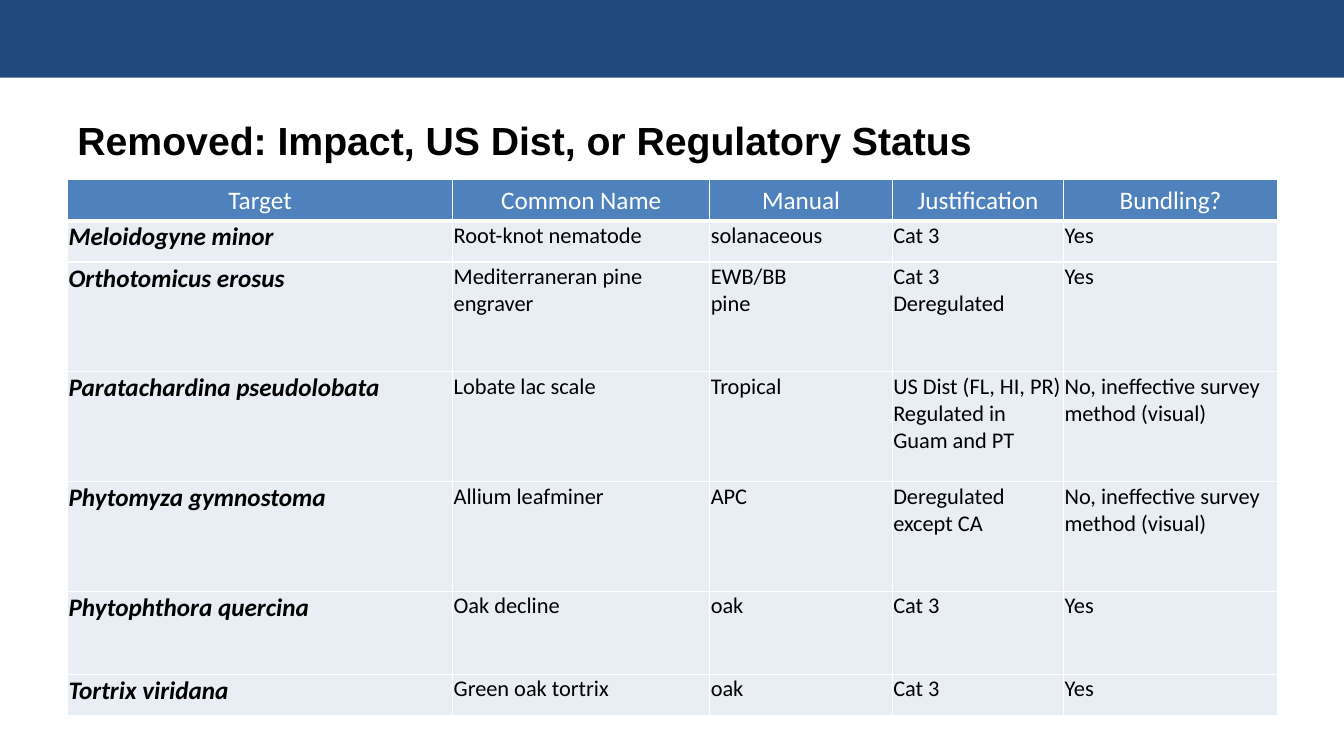
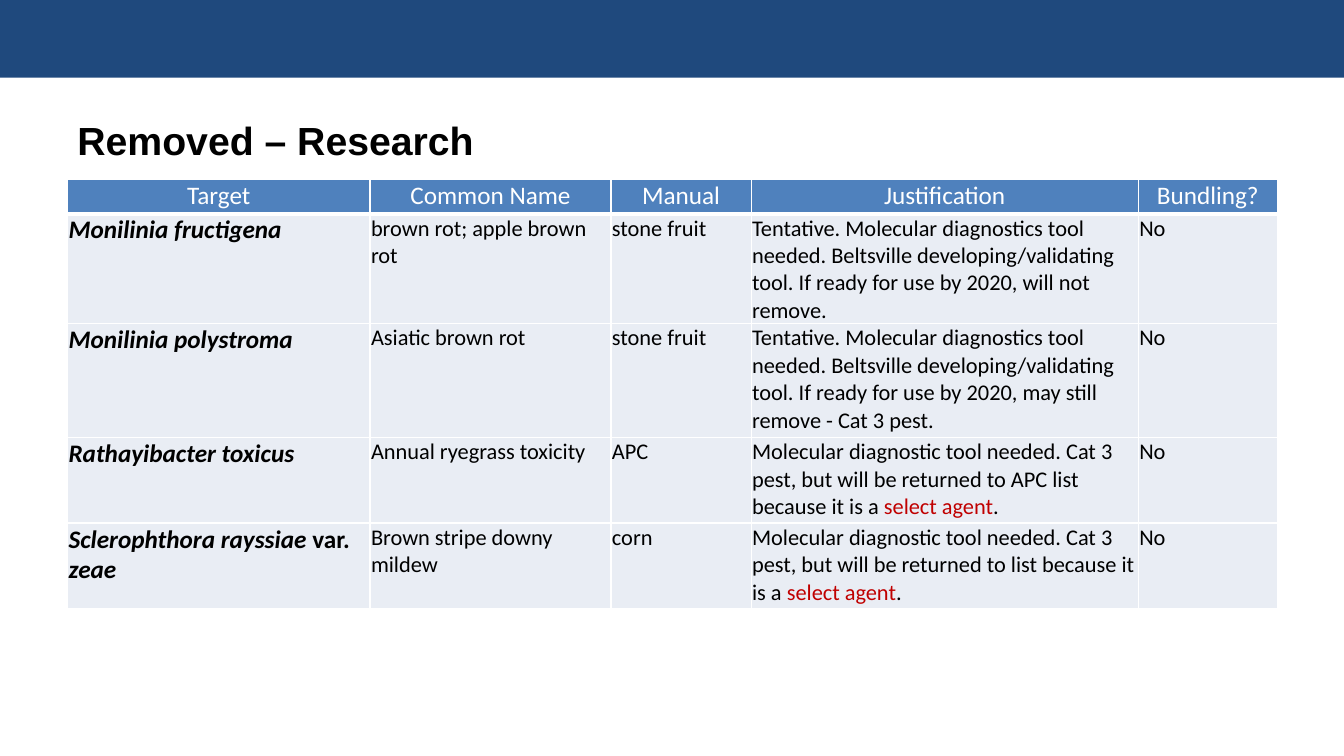
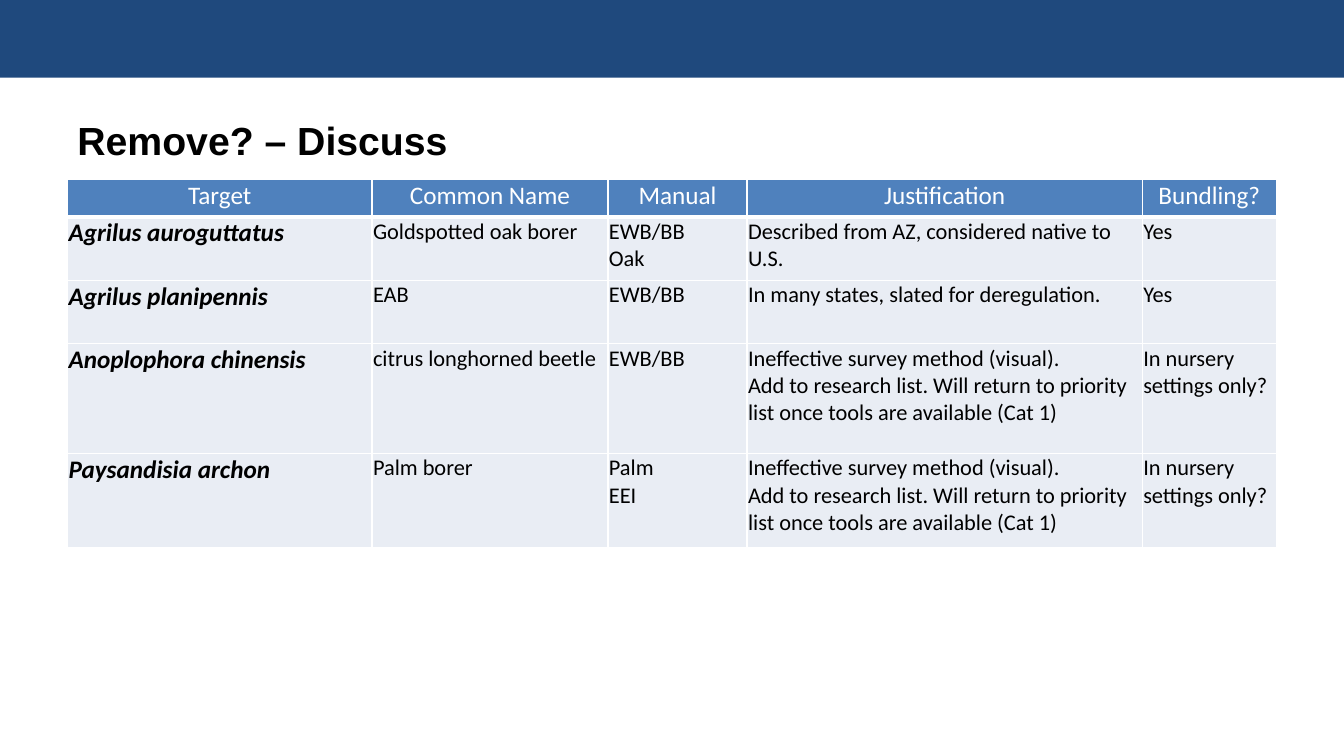
import pptx
import pptx.dml.color
import pptx.enum.shapes
import pptx.enum.text
import pptx.oxml.ns
import pptx.util
from lxml import etree

Inches, Pt = pptx.util.Inches, pptx.util.Pt
ALIGN = pptx.enum.text.PP_ALIGN
ANCHOR = pptx.enum.text.MSO_ANCHOR
qn = pptx.oxml.ns.qn

W, H = 13.33, 7.5
MARGIN = 0.67
CONTENT_W = 12
BAND_BOX = (0, 0, W, 0.77)
TITLE_BOX = (MARGIN, 1, CONTENT_W, 0.78)
TABLE_BOX = (MARGIN, 1.78, CONTENT_W)

COLORS = {
    "band": "1F497D",
    "header": "4F81BD",
    "body": "E9EDF4",
    "white": "FFFFFF",
    "text": "000000",
    "accent": "C00000",
}
HEADERS = ["Target", "Common Name", "Manual", "Justification", "Bundling?"]

NO_SURVEY = "No, ineffective survey method (visual)"
TENTATIVE = ("Tentative. Molecular diagnostics tool needed. Beltsville "
             "developing/validating tool. If ready for use by 2020, ")
RETURNED = ("Molecular diagnostic tool needed. Cat 3 pest, but will be returned "
            "to {} because it is a *select agent*.")
INEFFECTIVE = ("Ineffective survey method (visual).\nAdd to research list. Will "
               "return to priority list once tools are available (Cat 1)")
NURSERY = "In nursery settings only?"

# Asterisks mark upright words in a target name and accented words elsewhere.
SLIDES = [
    {
        "title": "Removed: Impact, US Dist, or Regulatory Status",
        "cols": [3.82, 2.55, 1.81, 1.7, 2.12],
        "rows": [0.41, 0.41, 1.09, 1.09, 1.09, 0.82, 0.41],
        "header_anchor": ANCHOR.MIDDLE,
        "body": [
            ["Meloidogyne minor", "Root-knot nematode", "solanaceous", "Cat 3", "Yes"],
            ["Orthotomicus erosus", "Mediterraneran pine engraver", "EWB/BB\npine",
             "Cat 3\nDeregulated", "Yes"],
            ["Paratachardina pseudolobata", "Lobate lac scale", "Tropical",
             "US Dist (FL, HI, PR)\nRegulated in Guam and PT", NO_SURVEY],
            ["Phytomyza gymnostoma", "Allium leafminer", "APC",
             "Deregulated except CA", NO_SURVEY],
            ["Phytophthora quercina", "Oak decline", "oak", "Cat 3", "Yes"],
            ["Tortrix viridana", "Green oak tortrix", "oak", "Cat 3", "Yes"],
        ],
    },
    {
        "title": "Removed – Research",
        "cols": [3, 2.39, 1.39, 3.84, 1.38],
        "rows": [0.34, 1.09, 1.13, 0.85, 0.85],
        "header_anchor": ANCHOR.TOP,
        "body": [
            ["Monilinia fructigena", "brown rot; apple brown rot", "stone fruit",
             TENTATIVE + "will not remove.", "No"],
            ["Monilinia polystroma", "Asiatic brown rot", "stone fruit",
             TENTATIVE + "may still remove - Cat 3 pest.", "No"],
            ["Rathayibacter toxicus", "Annual ryegrass toxicity", "APC",
             RETURNED.format("APC list"), "No"],
            ["Sclerophthora rayssiae *var. *zeae", "Brown stripe downy mildew", "corn",
             RETURNED.format("list"), "No"],
        ],
    },
    {
        "title": "Remove? – Discuss",
        "cols": [3.02, 2.34, 1.38, 3.92, 1.33],
        "rows": [0.37, 0.63, 0.63, 1.09, 0.93],
        "header_anchor": ANCHOR.TOP,
        "body": [
            ["Agrilus auroguttatus", "Goldspotted oak borer", "EWB/BB\nOak",
             "Described from AZ, considered native to U.S.", "Yes"],
            ["Agrilus planipennis", "EAB", "EWB/BB",
             "In many states, slated for deregulation.", "Yes"],
            ["Anoplophora chinensis", "citrus longhorned beetle", "EWB/BB",
             INEFFECTIVE, NURSERY],
            ["Paysandisia archon", "Palm borer", "Palm\nEEI", INEFFECTIVE, NURSERY],
        ],
    },
]


def rgb(name):
    return pptx.dml.color.RGBColor.from_string(COLORS[name])


def add_run(p, text, size, font, color, bold=False, italic=False):
    r = p.add_run()
    r.text = text
    f = r.font
    f.size, f.name, f.bold, f.italic = Pt(size), font, bold, italic
    f.color.rgb = rgb(color)


def add_band(slide, box):
    sp = slide.shapes.add_shape(pptx.enum.shapes.MSO_SHAPE.RECTANGLE, *map(Inches, box))
    sp.shadow.inherit = False
    sp.fill.solid()
    sp.fill.fore_color.rgb = rgb("band")
    sp.line.fill.background()


def add_title(slide, box, text):
    tf = slide.shapes.add_textbox(*map(Inches, box)).text_frame
    tf.word_wrap = True
    tf.vertical_anchor = ANCHOR.MIDDLE
    add_run(tf.paragraphs[0], text, 28, "Arial", "text", bold=True)


def set_borders(cell, bottom):
    """Draw white cell edges; bottom is the lower edge's width in points."""
    tc_pr = cell._tc.get_or_add_tcPr()
    for side, width in (("L", 1), ("R", 1), ("T", 1), ("B", bottom)):
        ln = etree.SubElement(tc_pr, qn("a:ln" + side), w=str(Pt(width)))
        fill = etree.SubElement(ln, qn("a:solidFill"))
        etree.SubElement(fill, qn("a:srgbClr"), val=COLORS["white"])


def style_cell(cell, fill, bottom, anchor):
    cell.margin_left = cell.margin_right = cell.margin_top = Inches(0.01)
    cell.margin_bottom = 0
    cell.vertical_anchor = anchor
    set_borders(cell, bottom)
    cell.fill.solid()
    cell.fill.fore_color.rgb = rgb(fill)


def fill_header(cell, text, anchor):
    style_cell(cell, "header", 3, anchor)
    p = cell.text_frame.paragraphs[0]
    p.alignment = ALIGN.CENTER
    add_run(p, text, 18, "Calibri", "white")


def fill_body(cell, text, is_target):
    style_cell(cell, "body", 1, ANCHOR.TOP)
    tf = cell.text_frame
    for i, line in enumerate(text.split("\n")):
        p = tf.add_paragraph() if i else tf.paragraphs[0]
        for j, part in enumerate(line.split("*")):
            marked = j % 2 == 1
            if is_target:
                add_run(p, part, 18, "Calibri", "text", bold=True, italic=not marked)
            else:
                add_run(p, part, 16, "Calibri", "accent" if marked else "text")


def add_pest_table(slide, box, cols, rows, body, header_anchor):
    size = [Inches(v) for v in (*box, sum(rows))]
    table = slide.shapes.add_table(len(rows), len(cols), *size).table
    for column, width in zip(table.columns, cols):
        column.width = Inches(width)
    for row, height in zip(table.rows, rows):
        row.height = Inches(height)
    for c, text in enumerate(HEADERS):
        fill_header(table.cell(0, c), text, header_anchor)
    for r, values in enumerate(body, 1):
        for c, text in enumerate(values):
            fill_body(table.cell(r, c), text, c == 0)


def add_pest_slide(prs, title, **table):
    slide = prs.slides.add_slide(prs.slide_layouts[6])
    add_band(slide, BAND_BOX)
    add_title(slide, TITLE_BOX, title)
    add_pest_table(slide, TABLE_BOX, **table)


def main():
    prs = pptx.Presentation()
    prs.slide_width, prs.slide_height = Inches(W), Inches(H)
    for content in SLIDES:
        add_pest_slide(prs, **content)
    prs.save("out.pptx")


if __name__ == "__main__":
    main()
